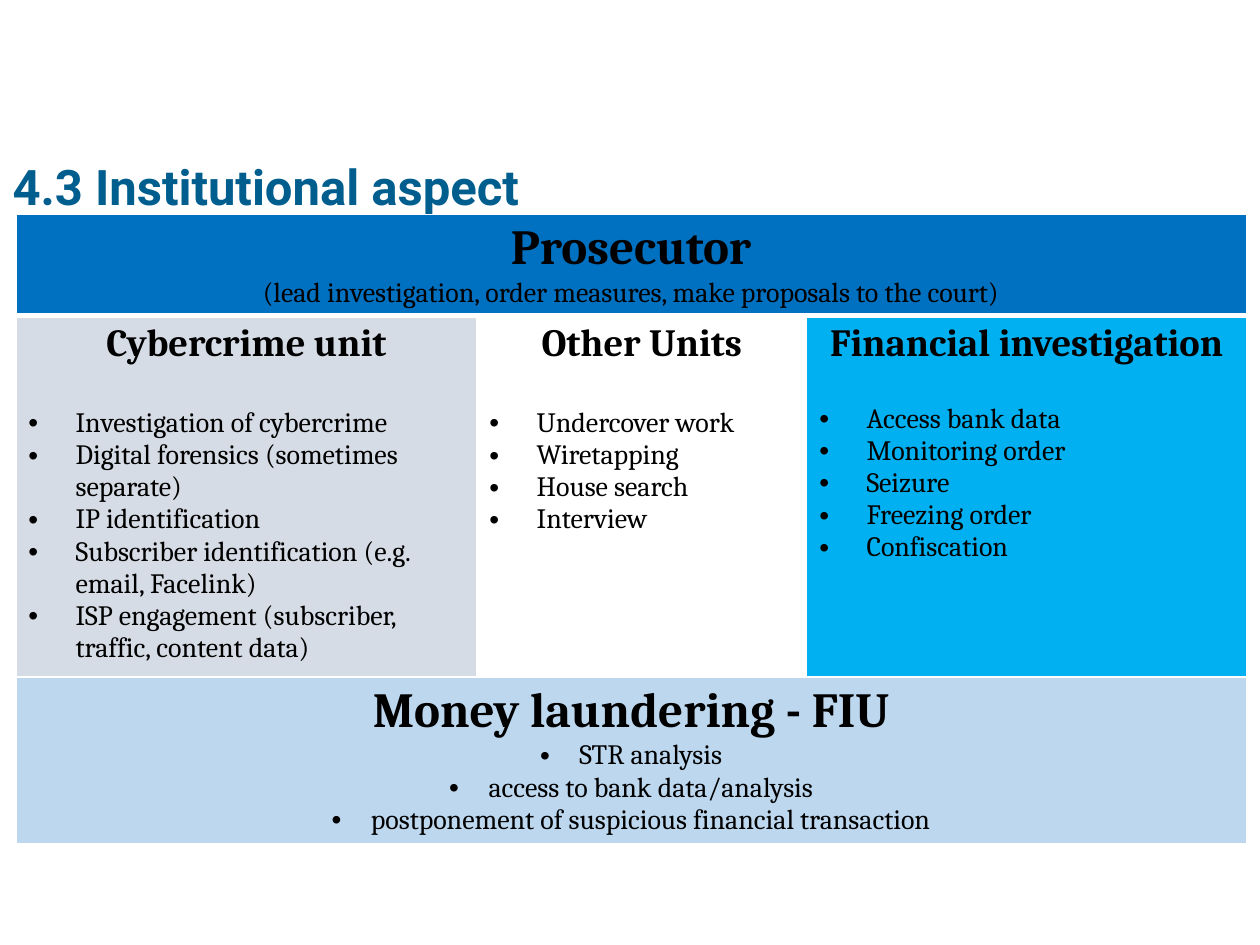
from lxml import etree
from pptx import Presentation
from pptx import util as u
from pptx.dml import color
from pptx.enum import text
from pptx.oxml import ns

Pt = u.Pt
COLORS = {
    "title": "005E8E",
    "text": "000000",
    "border": "FFFFFF",
    "prosecutor": "0070C0",
    "cybercrime": "D6DCE5",
    "financial": "00B0F0",
    "laundering": "BDD7EE",
}
COLUMN_WIDTHS = [263.5, 188.5, 251.3]
ROW_HEIGHTS = [56.5, 206.6, 95]
UNITS = [
    ("Cybercrime unit", "cybercrime", 23.4, [
        "Investigation of cybercrime",
        "Digital forensics (sometimes separate)",
        "IP identification",
        "Subscriber identification (e.g. email, Facelink)",
        "ISP engagement (subscriber, traffic, content data)",
    ]),
    ("Other Units", None, 23.4, [
        "Undercover work", "Wiretapping", "House search", "Interview",
    ]),
    ("Financial investigation", "financial", 21, [
        "Access bank data", "Monitoring order", "Seizure",
        "Freezing order", "Confiscation",
    ]),
]
FIU_TASKS = [
    "STR analysis",
    "access to bank data/analysis",
    "postponement of suspicious financial transaction",
]


def rgb(name):
    return color.RGBColor.from_string(COLORS[name])


def add_run(paragraph, words, size, bold=False, font="Cambria", fill="text"):
    run = paragraph.add_run()
    run.text = words
    run.font.size = Pt(size)
    run.font.bold = bold
    run.font.name = font
    run.font.color.rgb = rgb(fill)


def add_title(slide, words):
    title = slide.shapes.title
    title.left, title.top, title.width, title.height = Pt(0), Pt(82.8), Pt(720), Pt(51)
    frame = title.text_frame
    frame.vertical_anchor = text.MSO_ANCHOR.MIDDLE
    paragraph = frame.paragraphs[0]
    paragraph.alignment = text.PP_ALIGN.LEFT
    paragraph.line_spacing = 0.9
    add_run(paragraph, words, 28, True, "Roboto", "title")


def set_borders(cell, widths):
    properties = cell._tc.get_or_add_tcPr()
    for side, width in zip("LRTB", widths):
        line = etree.SubElement(properties, ns.qn(f"a:ln{side}"), w=str(Pt(width)))
        solid = etree.SubElement(line, ns.qn("a:solidFill"))
        etree.SubElement(solid, ns.qn("a:srgbClr"), val=COLORS["border"])


def fill_cell(cell, name):
    if name is None:
        cell.fill.background()
    else:
        cell.fill.solid()
        cell.fill.fore_color.rgb = rgb(name)


def add_heading(cell, words, size):
    paragraph = cell.text_frame.paragraphs[0]
    paragraph.alignment = text.PP_ALIGN.CENTER
    add_run(paragraph, words, size, True)


def add_bullets(cell, items, indent, gap=0, alignment=text.PP_ALIGN.LEFT):
    for index, item in enumerate(items):
        paragraph = cell.text_frame.add_paragraph()
        properties = paragraph._p.get_or_add_pPr()
        properties.set("marL", str(Pt(indent)))
        properties.set("indent", str(-Pt(indent)))
        etree.SubElement(properties, ns.qn("a:buFont"), typeface="Arial")
        etree.SubElement(properties, ns.qn("a:buChar"), char="•")
        paragraph.alignment = alignment
        if gap and index == 0:
            paragraph.space_before = Pt(gap)
        add_run(paragraph, item, 16)


def add_grid(slide):
    frame = slide.shapes.add_table(
        len(ROW_HEIGHTS), len(COLUMN_WIDTHS), Pt(9), Pt(122.6),
        Pt(sum(COLUMN_WIDTHS)), Pt(sum(ROW_HEIGHTS)))
    table = frame.table
    table.first_row = table.horz_banding = False
    for column, width in zip(table.columns, COLUMN_WIDTHS):
        column.width = Pt(width)
    for index, (row, height) in enumerate(zip(table.rows, ROW_HEIGHTS)):
        row.height = Pt(height)
        for cell in row.cells:
            set_borders(cell, (1, 1, 3 if index == 1 else 1, 3 if index == 0 else 1))
    return table


def add_band(table, row, heading, fill):
    cell = table.cell(row, 0)
    cell.merge(table.cell(row, len(COLUMN_WIDTHS) - 1))
    fill_cell(cell, fill)
    add_heading(cell, heading, 28)
    return cell


def main():
    presentation = Presentation()
    presentation.slide_width, presentation.slide_height = Pt(720), Pt(540)
    slide = presentation.slides.add_slide(presentation.slide_layouts[5])
    add_title(slide, "4.3 Institutional aspect")
    table = add_grid(slide)

    prosecutor = add_band(table, 0, "Prosecutor", "prosecutor")
    role = prosecutor.text_frame.add_paragraph()
    role.alignment = text.PP_ALIGN.CENTER
    add_run(role, "(lead investigation, order measures, make proposals to the court)", 16)

    for column, (heading, fill, gap, tasks) in enumerate(UNITS):
        cell = table.cell(1, column)
        fill_cell(cell, fill)
        add_heading(cell, heading, 22)
        add_bullets(cell, tasks, 27, gap)

    laundering = add_band(table, 2, "Money laundering - FIU", "laundering")
    add_bullets(laundering, FIU_TASKS, 22.5, alignment=text.PP_ALIGN.CENTER)
    presentation.save("out.pptx")


if __name__ == "__main__":
    main()
